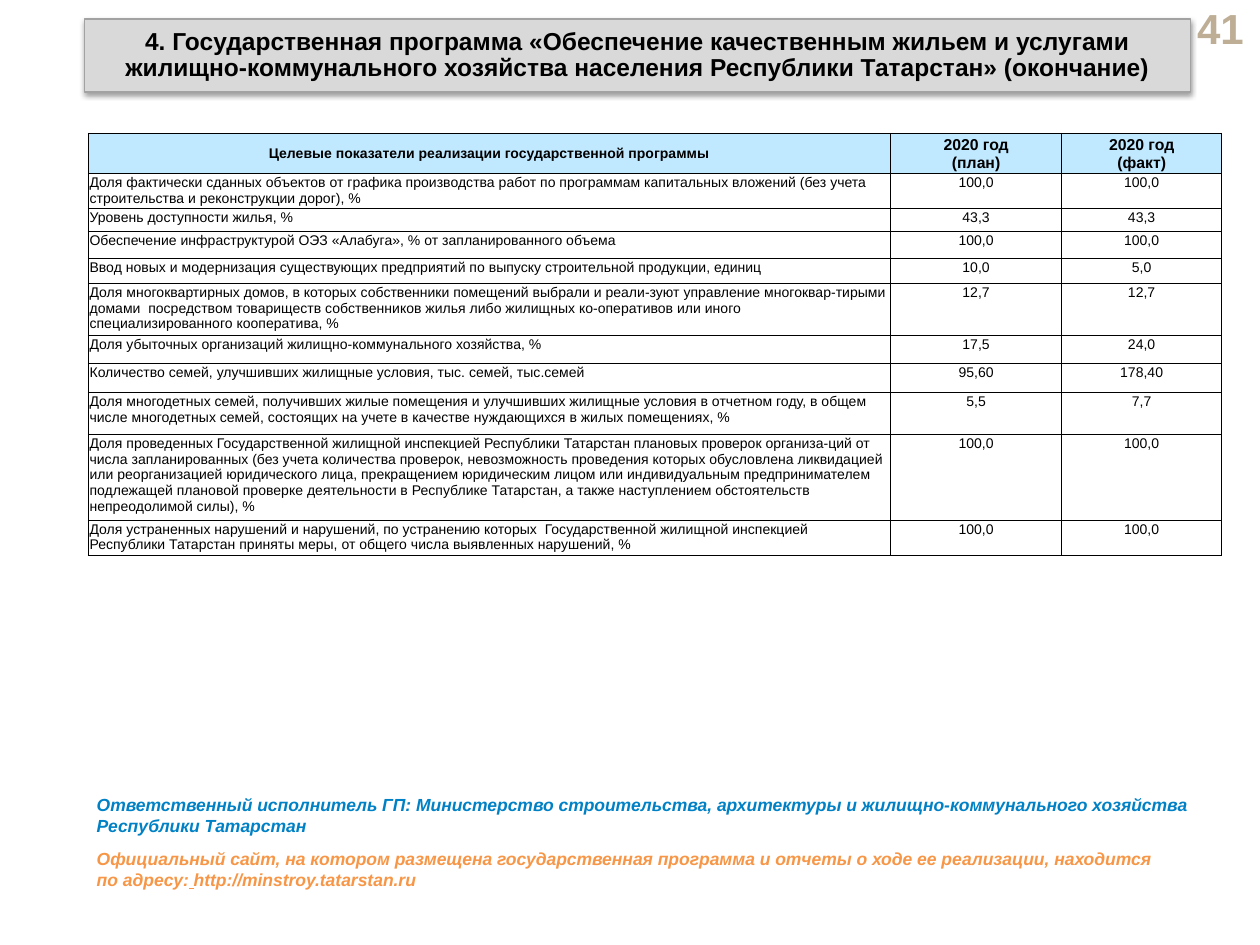
from lxml.etree import SubElement
from pptx import Presentation
from pptx.dml.color import RGBColor
from pptx.enum.text import MSO_ANCHOR as Anchor, MSO_AUTO_SIZE as AutoSize, PP_ALIGN as Align
from pptx.oxml.ns import qn
from pptx.util import Pt

TITLE = ("4. Государственная программа «Обеспечение качественным жильем и услугами "
         "жилищно-коммунального хозяйства населения Республики Татарстан» (окончание)")
HEADER = ("Целевые показатели реализации государственной программы",
          "2020 год\n(план)", "2020 год\n(факт)")
COLUMN_WIDTHS = (458.3, 98, 91.2)
HEADER_HEIGHT = 22.8
# Row height, indicator, plan, fact
INDICATORS = [
    (20, "Доля фактически сданных объектов от графика производства работ по программам "
         "капитальных вложений (без учета строительства и реконструкции дорог), %",
     "100,0", "100,0"),
    (13.2, "Уровень доступности жилья, %", "43,3", "43,3"),
    (15.4, "Обеспечение инфраструктурой ОЭЗ «Алабуга», % от запланированного объема",
     "100,0", "100,0"),
    (14.3, "Ввод новых и модернизация существующих предприятий по выпуску строительной "
           "продукции, единиц", "10,0", "5,0"),
    (29.7, "Доля многоквартирных домов, в которых собственники помещений выбрали и реали-зуют "
           "управление многоквар-тирыми домами  посредством товариществ собственников жилья "
           "либо жилищных ко-оперативов или иного специализированного кооператива, %",
     "12,7", "12,7"),
    (16.2, "Доля убыточных организаций жилищно-коммунального хозяйства, %", "17,5", "24,0"),
    (16.4, "Количество семей, улучшивших жилищные условия, тыс. семей, тыс.семей",
     "95,60", "178,40"),
    (24, "Доля многодетных семей, получивших жилые помещения и улучшивших жилищные условия "
         "в отчетном году, в общем числе многодетных семей, состоящих на учете в качестве "
         "нуждающихся в жилых помещениях, %", "5,5", "7,7"),
    (49.1, "Доля проведенных Государственной жилищной инспекцией Республики Татарстан плановых "
           "проверок организа-ций от числа запланированных (без учета количества проверок, "
           "невозможность проведения которых обусловлена ликвидацией или реорганизацией "
           "юридического лица, прекращением юридическим лицом или индивидуальным "
           "предпринимателем подлежащей плановой проверке деятельности в Республике Татарстан, "
           "а также наступлением обстоятельств непреодолимой силы), %", "100,0", "100,0"),
    (20, "Доля устраненных нарушений и нарушений, по устранению которых  Государственной "
         "жилищной инспекцией Республики Татарстан приняты меры, от общего числа выявленных "
         "нарушений, %", "100,0", "100,0"),
]
EXECUTOR = ("Ответственный исполнитель ГП: Министерство строительства, архитектуры и "
            "жилищно-коммунального хозяйства Республики Татарстан")
WEBSITE = ("Официальный сайт, на котором размещена государственная программа и отчеты о ходе "
           "ее реализации, находится по адресу:")


def color(hex_string):
    return RGBColor.from_string(hex_string)


def add_solid_fill(parent, hex_string):
    fill = SubElement(parent, qn("a:solidFill"))
    return SubElement(fill, qn("a:srgbClr"), val=hex_string)


class PageBuilder:
    font_name = "Arial"
    ink = "000000"
    header_fill = "C0E9FF"
    cell_fill = "FFFFFF"

    def __init__(self, deck):
        self.page = deck.slides.add_slide(deck.slide_layouts[5])

    def format(self, frame, size, hex_string=ink, bold=False, italic=False, align=Align.LEFT):
        for para in frame.paragraphs:
            para.alignment = align
            for span in para.runs:
                font = span.font
                font.name, font.size = self.font_name, Pt(size)
                font.bold, font.italic = bold, italic
                font.color.rgb = color(hex_string)

    def title(self, text, left, top, width, height):
        """Turn the title placeholder into a rounded plate with a soft shadow."""
        box = self.page.shapes.title
        box.left, box.top, box.width, box.height = Pt(left), Pt(top), Pt(width), Pt(height)
        properties = box.element.spPr
        geometry = SubElement(properties, qn("a:prstGeom"), prst="roundRect")
        SubElement(geometry, qn("a:avLst"))
        box.fill.solid()
        box.fill.fore_color.rgb = color("D9D9D9")
        box.line.color.rgb = color("A2A2A2")
        box.line.width = Pt(0.75)
        effects = SubElement(properties, qn("a:effectLst"))
        shadow = SubElement(effects, qn("a:outerShdw"), blurRad=str(Pt(3.1)),
                            dist=str(Pt(1.6)), dir="5400000", rotWithShape="0")
        shade = SubElement(shadow, qn("a:srgbClr"), val=self.ink)
        SubElement(shade, qn("a:alpha"), val="38000")
        frame = box.text_frame
        frame.text = text
        frame.word_wrap = True
        frame.auto_size = AutoSize.NONE
        frame.vertical_anchor = Anchor.MIDDLE
        frame.paragraphs[0].line_spacing = Pt(15)
        self.format(frame, 14, bold=True, align=Align.CENTER)

    def text(self, text, left, top, width, height, size, hex_string, **style):
        box = self.page.shapes.add_textbox(Pt(left), Pt(top), Pt(width), Pt(height))
        frame = box.text_frame
        frame.word_wrap = True
        frame.text = text
        self.format(frame, size, hex_string, bold=True, **style)
        return frame

    def cell(self, cell, text, fill, size, bold, align, anchor):
        cell.text_frame.text = text
        cell.margin_left = cell.margin_right = cell.margin_top = Pt(0.7)
        cell.margin_bottom = 0
        cell.vertical_anchor = anchor
        properties = cell._tc.get_or_add_tcPr()
        for side in ("lnL", "lnR", "lnT", "lnB"):
            border = SubElement(properties, qn(f"a:{side}"), w=str(Pt(0.75)))
            add_solid_fill(border, self.ink)
        cell.fill.solid()
        cell.fill.fore_color.rgb = color(fill)
        self.format(cell.text_frame, size, bold=bold, align=align)

    def table(self, left, top):
        heights = [HEADER_HEIGHT] + [row[0] for row in INDICATORS]
        holder = self.page.shapes.add_table(
            len(heights), len(COLUMN_WIDTHS), Pt(left), Pt(top),
            Pt(sum(COLUMN_WIDTHS)), Pt(sum(heights)))
        table = holder.table
        table.first_row = table.horz_banding = False
        for column, width in zip(table.columns, COLUMN_WIDTHS):
            column.width = Pt(width)
        for row, height in zip(table.rows, heights):
            row.height = Pt(height)
        for column, text in enumerate(HEADER):
            self.cell(table.cell(0, column), text, self.header_fill, 9 if column else 8,
                      True, Align.CENTER, Anchor.MIDDLE)
        for row, (_, *texts) in enumerate(INDICATORS, start=1):
            for column, text in enumerate(texts):
                self.cell(table.cell(row, column), text, self.cell_fill, 8, False,
                          Align.CENTER if column else Align.LEFT, Anchor.TOP)


def main():
    deck = Presentation()
    deck.slide_width, deck.slide_height = Pt(720), Pt(540)
    builder = PageBuilder(deck)
    number = builder.text("41", 671.8, 3.6, 46, 24.5, 24, "BFAE96", align=Align.RIGHT)
    number.vertical_anchor = Anchor.MIDDLE
    builder.table(50.5, 76.3)
    builder.title(TITLE, 48.2, 10.8, 632.2, 41.8)
    builder.text(EXECUTOR, 48.2, 450, 641.5, 31.7, 10, "0081C5", italic=True)
    website = builder.text(WEBSITE, 48.2, 481.3, 622, 31.7, 10, "F79646", italic=True)
    para = website.paragraphs[0]
    gap, address = para.add_run(), para.add_run()
    gap.text, address.text = " ", "http://minstroy.tatarstan.ru"
    builder.format(website, 10, "F79646", bold=True, italic=True)
    gap.font.underline = True
    deck.save("out.pptx")


if __name__ == "__main__":
    main()
